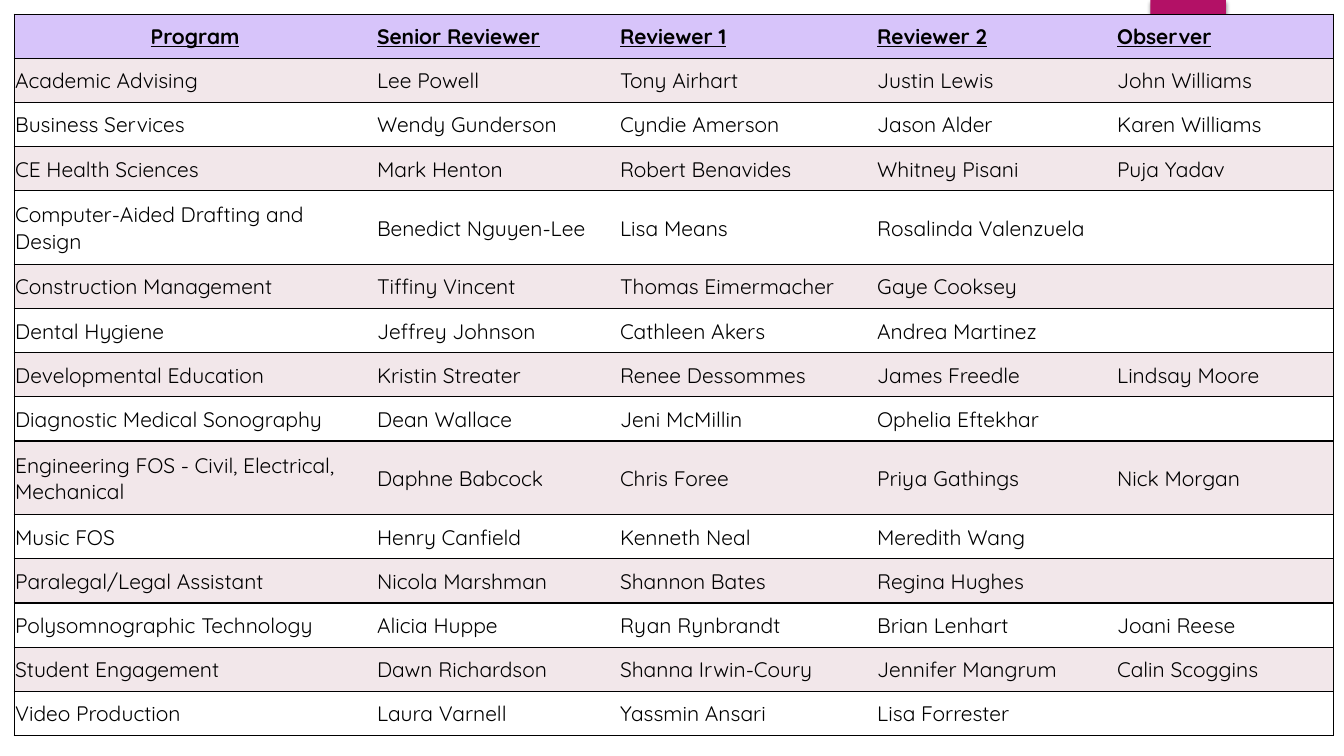
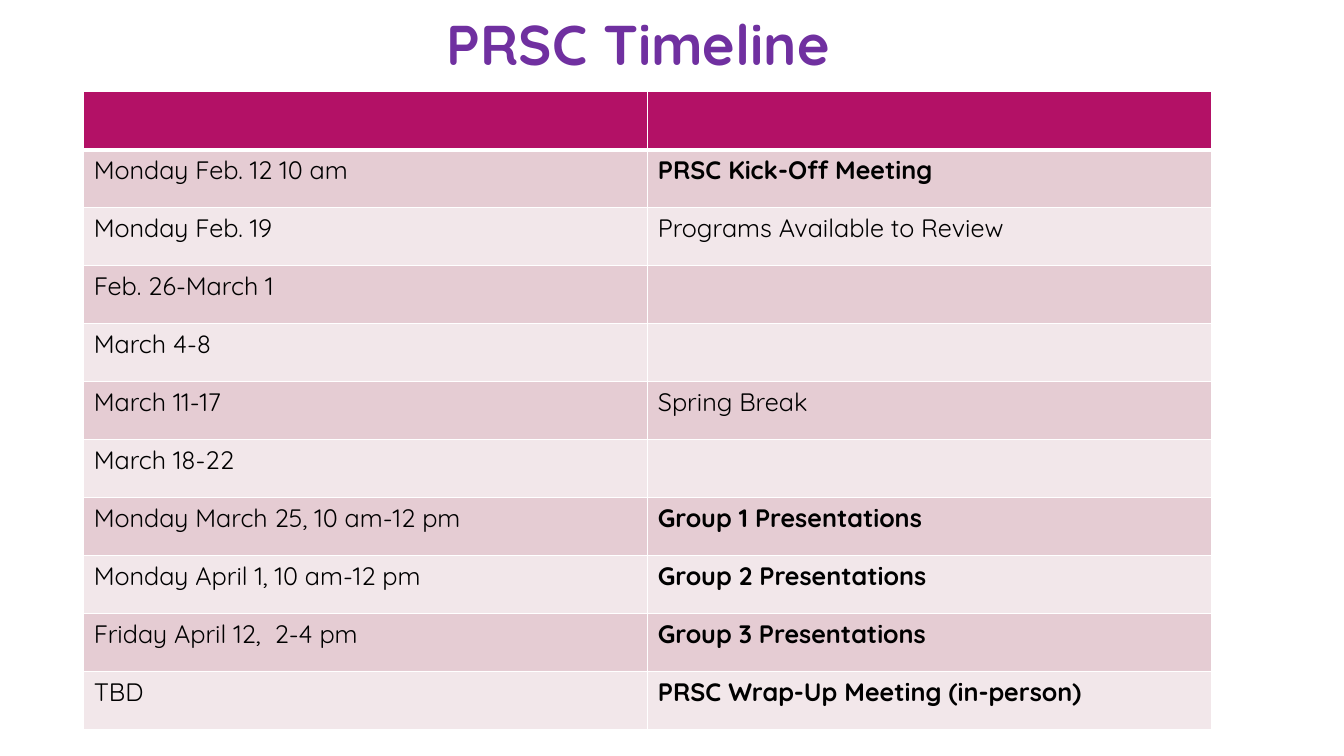
from lxml.etree import SubElement
from pptx import Presentation
from pptx.dml.color import RGBColor
from pptx.enum.shapes import MSO_SHAPE
from pptx.enum.text import MSO_ANCHOR, MSO_AUTO_SIZE, PP_ALIGN
from pptx.oxml import parse_xml
from pptx.oxml.ns import nsdecls, qn
from pptx.util import Inches, Pt

FONT = "Quicksand"
COLOURS = {
    "black": "000000",
    "white": "FFFFFF",
    "magenta": "B31166",
    "purple": "7030A0",
    "lilac": "D7C4FA",
    "rose": "E5CCD3",
    "blush": "F2E7EA",
}

REVIEWERS = [
    ["Program", "Senior Reviewer", "Reviewer 1", "Reviewer 2", "Observer"],
    ["Academic Advising", "Lee Powell", "Tony Airhart", "Justin Lewis", "John Williams"],
    ["Business Services", "Wendy Gunderson", "Cyndie Amerson", "Jason Alder", "Karen Williams"],
    ["CE Health Sciences", "Mark Henton", "Robert Benavides", "Whitney Pisani", "Puja Yadav"],
    ["Computer-Aided Drafting and Design", "Benedict Nguyen-Lee", "Lisa Means", "Rosalinda Valenzuela", ""],
    ["Construction Management", "Tiffiny Vincent", "Thomas Eimermacher", "Gaye Cooksey", ""],
    ["Dental Hygiene", "Jeffrey Johnson", "Cathleen Akers", "Andrea Martinez", ""],
    ["Developmental Education", "Kristin Streater", "Renee Dessommes", "James Freedle", "Lindsay Moore"],
    ["Diagnostic Medical Sonography", "Dean Wallace", "Jeni McMillin", "Ophelia Eftekhar", ""],
    ["Engineering FOS - Civil, Electrical, Mechanical", "Daphne Babcock", "Chris Foree", "Priya Gathings",
     "Nick Morgan"],
    ["Music FOS", "Henry Canfield", "Kenneth Neal", "Meredith Wang", ""],
    ["Paralegal/Legal Assistant", "Nicola Marshman", "Shannon Bates", "Regina Hughes", ""],
    ["Polysomnographic Technology", "Alicia Huppe", "Ryan Rynbrandt", "Brian Lenhart", "Joani Reese"],
    ["Student Engagement", "Dawn Richardson", "Shanna Irwin-Coury", "Jennifer Mangrum", "Calin Scoggins"],
    ["Video Production", "Laura Varnell", "Yassmin Ansari", "Lisa Forrester", ""],
]
TWO_LINE_ROWS = (4, 9)

TIMELINE = [
    ["", ""],
    ["Monday Feb. 12 10 am", "PRSC Kick-Off Meeting"],
    ["Monday Feb. 19", "Programs Available to Review"],
    ["Feb. 26-March 1", ""],
    ["March 4-8", ""],
    ["March 11-17", "Spring Break"],
    ["March 18-22", ""],
    ["Monday March 25, 10 am-12 pm", "Group 1 Presentations"],
    ["Monday April 1, 10 am-12 pm", "Group 2 Presentations"],
    ["Friday April 12,  2-4 pm", "Group 3 Presentations"],
    ["TBD", "PRSC Wrap-Up Meeting (in-person)"],
]


def colour(name):
    """Return the named colour."""
    return RGBColor.from_string(COLOURS[name])


def apply_format(target, values):
    """Set each attribute of the target from a dict."""
    for name, value in values.items():
        setattr(target, name, value)


def style_font(font, size, colour_name, **values):
    """Give a font its face, size, colour and further attributes."""
    apply_format(font, {"name": FONT, "size": Pt(size), **values})
    font.color.rgb = colour(colour_name)


def add_block(page, box, colour_name):
    """Draw a plain filled rectangle."""
    block = page.shapes.add_shape(MSO_SHAPE.RECTANGLE, *map(Inches, box))
    block.shadow.inherit = False
    block.fill.solid()
    block.fill.fore_color.rgb = colour(colour_name)
    block.line.fill.background()
    return block


def add_master_band(deck, page):
    """Place the shadowed accent band on the slide master."""
    band = add_block(page, (11.41, 0, 0.75, 1.25), "magenta")
    effects = band.element.spPr.find(qn("a:effectLst"))
    effects.append(parse_xml(
        f'<a:outerShdw {nsdecls("a")} blurRad="{Pt(3)}" dist="{Pt(2)}" dir="5400000" rotWithShape="0">'
        f'<a:srgbClr val="{COLOURS["black"]}"><a:alpha val="45000"/></a:srgbClr></a:outerShdw>'))
    deck.slide_master.shapes.element.append(band.element)


def set_borders(cell, widths, colour_name):
    """Draw left, right, top and bottom borders; a zero width hides one."""
    properties = cell._tc.get_or_add_tcPr()
    for index, (side, width) in enumerate(zip("LRTB", widths)):
        line = SubElement(properties, qn(f"a:ln{side}"), w=str(Pt(width)))
        if width:
            fill = SubElement(line, qn("a:solidFill"))
            SubElement(fill, qn("a:srgbClr"), val=COLOURS[colour_name])
        else:
            SubElement(line, qn("a:noFill"))
        properties.insert(index, line)


def add_grid(page, box, rows, columns, heights):
    """Add an unbanded table with the given column widths and row heights."""
    table = page.shapes.add_table(len(rows), len(columns), *map(Inches, box)).table
    table.horz_banding = False
    for column, width in zip(table.columns, columns):
        column.width = Inches(width)
    for row, height in zip(table.rows, heights):
        row.height = Inches(height)
    return table


def fill_cell(cell, text, fill, size, **values):
    """Give a cell its fill and its text."""
    cell.fill.solid()
    cell.fill.fore_color.rgb = colour(fill)
    if text:
        span = cell.text_frame.paragraphs[0].add_run()
        span.text = text
        style_font(span.font, size, "black", **values)


def band_colour(row, header, odd, even):
    """Choose the fill of a table row."""
    return header if row == 0 else odd if row % 2 else even


def add_reviewer_table(page, box):
    """Build the table of programs and their reviewers."""
    tall = 0.73
    short = (box[3] - tall * len(TWO_LINE_ROWS)) / (len(REVIEWERS) - len(TWO_LINE_ROWS))
    heights = [tall if row in TWO_LINE_ROWS else short for row in range(len(REVIEWERS))]
    table = add_grid(page, box, REVIEWERS, (3.59, 2.41, 2.55, 2.38, 2.16), heights)
    layout = {
        "vertical_anchor": MSO_ANCHOR.MIDDLE,
        "margin_left": Inches(0.01),
        "margin_right": Inches(0.01),
        "margin_top": Inches(0.01),
        "margin_bottom": 0,
    }
    for row, texts in enumerate(REVIEWERS):
        header = row == 0
        for column, text in enumerate(texts):
            cell = table.cell(row, column)
            apply_format(cell, layout)
            fill_cell(cell, text, band_colour(row, "lilac", "blush", "white"), 15,
                      bold=header, underline=header)
            set_borders(cell, (column == 0, column == len(texts) - 1, 1, 1), "black")
    table.cell(0, 0).text_frame.paragraphs[0].alignment = PP_ALIGN.CENTER


def add_timeline_table(page, box):
    """Build the table of dates and events."""
    columns = [box[2] / 2] * 2
    heights = [box[3] / len(TIMELINE)] * len(TIMELINE)
    table = add_grid(page, box, TIMELINE, columns, heights)
    for row, texts in enumerate(TIMELINE):
        for column, text in enumerate(texts):
            cell = table.cell(row, column)
            meeting = column == 1 and text.endswith(("Meeting", "Presentations", "(in-person)"))
            fill_cell(cell, text, band_colour(row, "magenta", "rose", "blush"), 18, bold=meeting)
            set_borders(cell, (1, 1, 3 if row == 1 else 1, 1 if row else 3), "white")


def add_title(page, box, text):
    """Move the title placeholder into its box and format it."""
    title = page.shapes.title
    apply_format(title, dict(zip(("left", "top", "width", "height"), map(Inches, box))))
    apply_format(title.text_frame, {
        "vertical_anchor": MSO_ANCHOR.TOP,
        "word_wrap": True,
        "auto_size": MSO_AUTO_SIZE.SHAPE_TO_FIT_TEXT,
    })
    para = title.text_frame.paragraphs[0]
    para.alignment = PP_ALIGN.CENTER
    span = para.add_run()
    span.text = text
    style_font(span.font, 40, "purple", bold=True)


def build_reviewer_page(deck):
    """Build the slide of review assignments."""
    page = deck.slides.add_slide(deck.slide_layouts[6])
    add_master_band(deck, page)
    add_reviewer_table(page, (0.14, 0.14, 13.08, 7.16))


def build_timeline_page(deck):
    """Build the slide of the committee's dates."""
    page = deck.slides.add_slide(deck.slide_layouts[5])
    add_block(page, (11.2, 0, 1.11, 2.2), "white")
    add_timeline_table(page, (0.83, 0.91, 11.19, 6.33))
    add_title(page, (3.12, 0.04, 6.42, 0.77), "PRSC Timeline")


def main():
    """Build and save the deck."""
    deck = Presentation()
    deck.slide_width = Inches(13.33)
    deck.slide_height = Inches(7.5)
    build_reviewer_page(deck)
    build_timeline_page(deck)
    deck.save("out.pptx")


if __name__ == "__main__":
    main()
